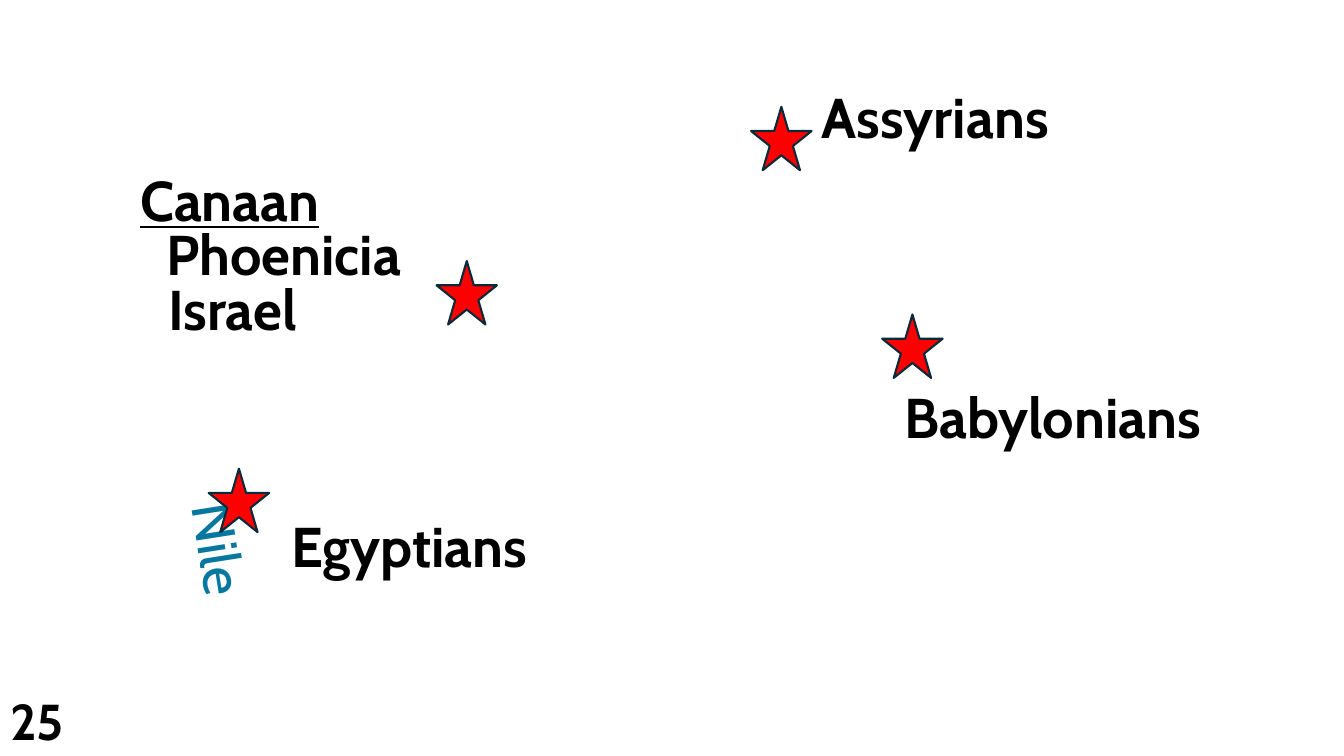
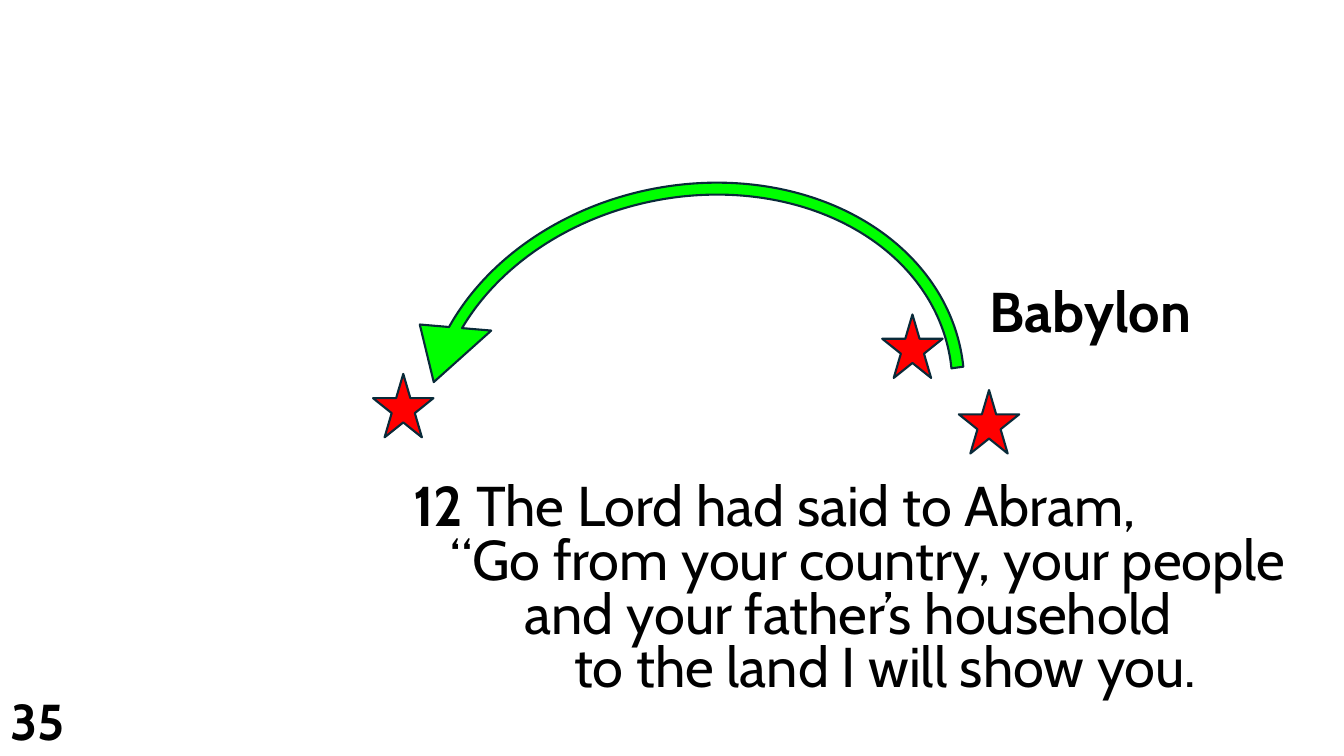
import pptx
import pptx.util
import pptx.dml.color
import pptx.enum.shapes
import pptx.enum.text
import pptx.oxml.ns
import lxml.etree

Inches, Pt = pptx.util.Inches, pptx.util.Pt
SHAPES = pptx.enum.shapes.MSO_SHAPE
ANCHOR = pptx.enum.text.MSO_ANCHOR
FONT = "Cabin"
COLORS = {"ink": "000000", "star": "FF0000", "edge": "092A39",
          "route": "00FF00", "river": "06779E", "panel": "FFFFFF"}
STAR = (0.6, 0.63)
LABEL = (3.59, 0.66)

PEOPLES = [("Assyrians", 8.05, 0.9), ("Babylonians", 8.87, 3.87),
           ("Canaan", 1.29, 1.72), ("Phoenicia", 1.55, 2.26),
           ("Israel", 1.57, 2.8), ("Egyptians", 2.79, 5.15)]
HOMES = [(7.45, 1.06), (8.75, 3.12), (4.33, 2.59), (2.07, 4.65)]
CITIES = [("Babylon", 9.72, 2.82)]
STOPS = [(9.51, 3.87), (3.7, 3.71), (8.75, 3.12)]
VERSE = [(0, "The Lord had said to Abram,"),
         (3, "“Go from your country, your people"),
         (9, "and your father’s household"),
         (13, "to the land I will show you.")]
STEP = 0.123
ARC = (0.024, 7.786, 198.335, 105.786, 0.072)


def rgb(name):
    return pptx.dml.color.RGBColor.from_string(COLORS[name])


def style(font, size=40, color="ink", bold=True):
    font.name, font.size, font.bold = FONT, Pt(size), bold
    font.color.rgb = rgb(color)


def box(*sizes):
    return [Inches(size) for size in sizes]


def draw(slide, kind, at, fill, edge=None):
    shape = slide.shapes.add_shape(kind, *box(*at))
    shape.shadow.inherit = False
    shape.fill.solid()
    shape.fill.fore_color.rgb = rgb(fill)
    if edge:
        shape.line.color.rgb = rgb(edge)
        shape.line.width = Pt(1.5)
    else:
        shape.line.fill.background()
    return shape


def label(slide, text, x, y):
    frame = slide.shapes.add_textbox(*box(x, y, *LABEL)).text_frame
    frame.word_wrap = True
    para = frame.paragraphs[0]
    para.text, para.line_spacing = text, 0.8
    style(para.font)
    return para


def start(deck, number):
    slide = deck.slides.add_slide(deck.slide_layouts[5])
    title = slide.shapes.title
    title.left, title.top, title.width, title.height = box(0, 6.75, 1.73, 0.75)
    frame = title.text_frame
    frame.auto_size = pptx.enum.text.MSO_AUTO_SIZE.NONE
    frame.vertical_anchor = ANCHOR.BOTTOM
    para = frame.paragraphs[0]
    para.text, para.line_spacing = str(number), 0.9
    para.alignment = pptx.enum.text.PP_ALIGN.LEFT
    style(para.font, 36)
    return slide


def stars(slide, spots):
    for spot in spots:
        draw(slide, SHAPES.STAR_5_POINT, (*spot, *STAR), "star", "edge")


def nations(deck):
    slide = start(deck, 25)
    for people in PEOPLES:
        para = label(slide, *people)
        para.font.underline = people[0] == "Canaan"
    river = slide.shapes.add_textbox(*box(1.61, 5.09, 1.17, 0.77))
    river.rotation = 81.1
    river.text_frame.word_wrap = False
    para = river.text_frame.paragraphs[0]
    para.text = "Nile"
    style(para.font, color="river", bold=False)
    stars(slide, HOMES)


def journey(deck):
    slide = start(deck, 35)
    route = draw(slide, SHAPES.CIRCULAR_ARROW, (3.88, 1.54, 6, 4.94),
                 "route", "edge")
    for index, value in enumerate(ARC):
        route.adjustments[index] = value
    route.rotation = 348.4
    route._element.spPr.xfrm.set("flipH", "1")
    stars(slide, STOPS)
    for city in CITIES:
        label(slide, *city)
    verse(slide)


def verse(slide):
    panel = draw(slide, SHAPES.RECTANGLE, (4, 4.75, 8.87, 2.28), "panel")
    qn = pptx.oxml.ns.qn
    tint = panel._element.spPr.find(".//" + qn("a:srgbClr"))
    lxml.etree.SubElement(tint, qn("a:alpha")).set("val", "60000")
    frame = panel.text_frame
    frame.word_wrap, frame.vertical_anchor = True, ANCHOR.TOP
    frame.margin_right = 0
    for index, (indent, text) in enumerate(VERSE):
        para = frame.add_paragraph() if index else frame.paragraphs[0]
        para.line_spacing = 0.8
        para.alignment = pptx.enum.text.PP_ALIGN.LEFT
        para._p.get_or_add_pPr().set("marL", str(Inches(indent * STEP)))
        style(para.font, bold=False)
        if not index:
            mark = para.add_run()
            mark.text = "12 "
            mark.font.bold = True
        para.add_run().text = text


def main():
    deck = pptx.Presentation()
    deck.slide_width, deck.slide_height = box(13.33, 7.5)
    nations(deck)
    journey(deck)
    deck.save("out.pptx")


if __name__ == "__main__":
    main()
